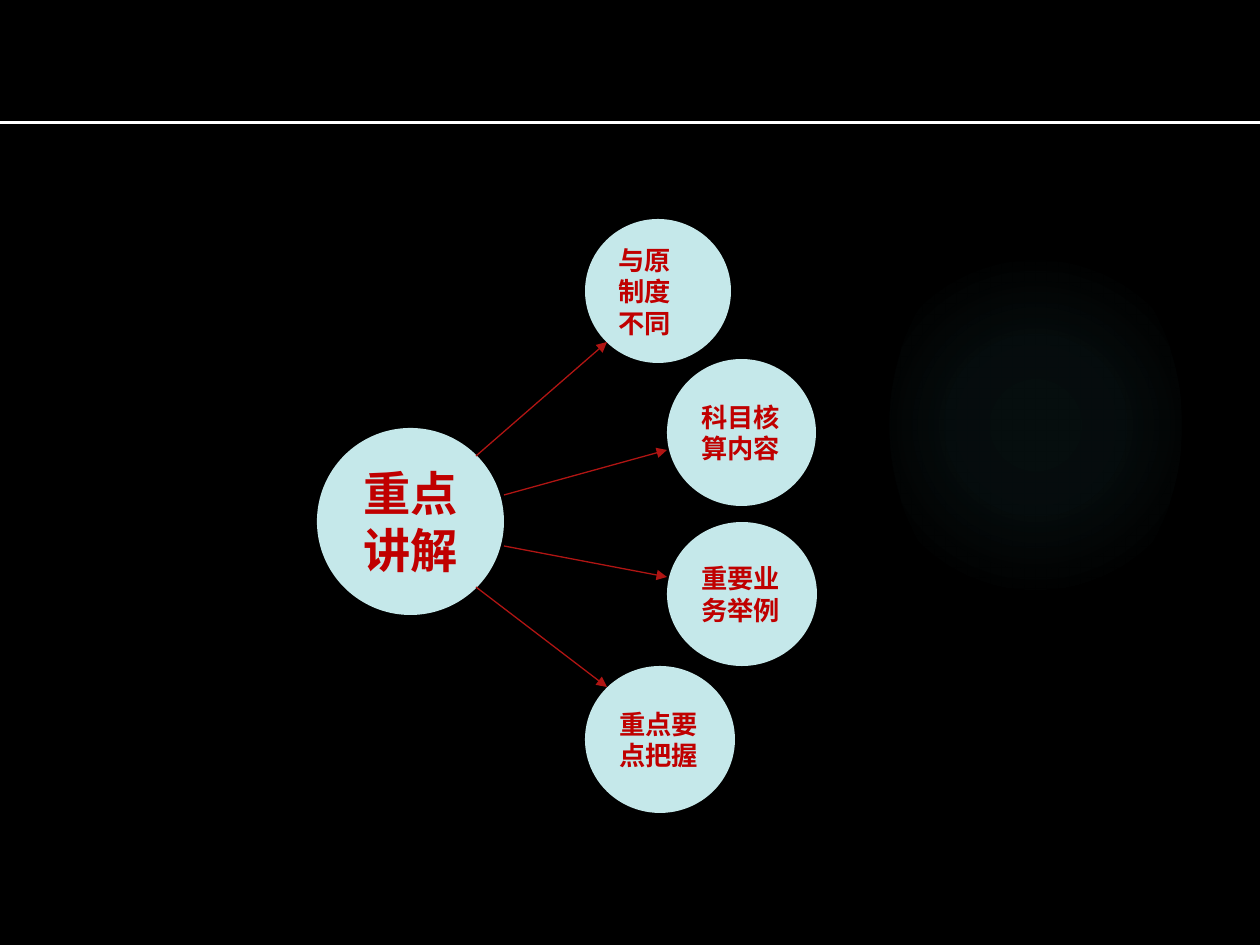
from lxml import etree
from pptx import Presentation
from pptx.dml.color import RGBColor
from pptx.enum.shapes import MSO_CONNECTOR, MSO_SHAPE
from pptx.enum.text import MSO_ANCHOR, PP_ALIGN
from pptx.oxml import parse_xml
from pptx.oxml.ns import nsdecls, qn
from pptx.util import Inches, Pt

OVAL, MINUS = MSO_SHAPE.OVAL, MSO_SHAPE.MATH_MINUS
STRAIGHT = MSO_CONNECTOR.STRAIGHT
MIDDLE = MSO_ANCHOR.MIDDLE
LEFT, CENTER = PP_ALIGN.LEFT, PP_ALIGN.CENTER

BLACK = RGBColor(0x00, 0x00, 0x00)
WHITE = RGBColor(0xFF, 0xFF, 0xFF)
PALE_TEAL = RGBColor(0xC5, 0xE8, 0xEA)
GLOW_TEAL = RGBColor(0x50, 0xB9, 0xC1)
TEXT_RED = RGBColor(0xC0, 0x00, 0x00)
ARROW_RED = RGBColor(0xB0, 0x15, 0x13)

LATIN_FONT = "League Spartan"
CHINESE_FONT = "Noto Sans CJK SC"
GLOW_STOPS = [(0, 7), (36, 6), (69, 0)]  # position and opacity in percent

# Topic, circle box, arrow start, arrow end
TOPICS = [
    ("与原制度不同", (585, 219, 146, 144), (476, 456), (607, 342)),
    ("科目核算内容", (667, 359, 149, 147), (504, 495), (667, 450)),
    ("重要业务举例", (667, 522, 150, 144), (504, 546), (667, 577)),
    ("重点要点把握", (585, 666, 150, 147), (476, 587), (607, 687)),
]


def px(length):
    return round(length * Inches(1) / 126)


def add_plain_shape(slide, kind, box, color):
    shape = slide.shapes.add_shape(kind, *map(px, box))
    shape.shadow.inherit = False
    shape.fill.solid()
    shape.fill.fore_color.rgb = color
    shape.line.fill.background()
    return shape


def add_glow(slide, box):
    """Add an ellipse whose faint colour fades out from its centre."""
    glow = add_plain_shape(slide, OVAL, box, GLOW_TEAL)
    stops = "".join(
        f'<a:gs pos="{position * 1000}"><a:srgbClr val="{GLOW_TEAL}">'
        f'<a:alpha val="{opacity * 1000}"/></a:srgbClr></a:gs>'
        for position, opacity in GLOW_STOPS
    )
    gradient = parse_xml(
        f'<a:gradFill {nsdecls("a")}><a:gsLst>{stops}</a:gsLst>'
        '<a:path path="circle"><a:fillToRect l="50000" t="50000" '
        'r="50000" b="50000"/></a:path></a:gradFill>'
    )
    properties = glow.element.spPr
    properties.replace(properties.find(qn("a:solidFill")), gradient)


def add_circle(slide, text, box, size, line_height, font_name, alignment):
    circle = add_plain_shape(slide, OVAL, box, PALE_TEAL)
    frame = circle.text_frame
    frame.word_wrap = True
    frame.vertical_anchor = MIDDLE
    paragraph = frame.paragraphs[0]
    paragraph.text = text
    paragraph.alignment = alignment
    paragraph.line_spacing = Pt(line_height)
    font = paragraph.font
    font.name = font_name
    font.size = Pt(size)
    font.bold = True
    font.color.rgb = TEXT_RED
    latin = next(paragraph._p.iter(qn("a:latin")))
    latin.addnext(latin.makeelement(qn("a:ea"), {"typeface": CHINESE_FONT}))


def add_arrow(slide, start, end):
    arrow = slide.shapes.add_connector(STRAIGHT, *map(px, start + end))
    arrow.line.color.rgb = ARROW_RED
    arrow.line.width = Pt(0.75)
    properties = arrow._element.spPr
    etree.SubElement(properties.find(qn("a:ln")), qn("a:tailEnd"), type="triangle")
    etree.SubElement(properties, qn("a:effectLst"))


def main():
    presentation = Presentation()
    presentation.slide_width = px(1260)
    presentation.slide_height = px(945)
    slide = presentation.slides.add_slide(presentation.slide_layouts[6])
    slide.background.fill.solid()
    slide.background.fill.fore_color.rgb = BLACK

    add_glow(slide, (890, 231, 291, 388))
    add_plain_shape(slide, MINUS, (-233, 117, 1736, 11), WHITE)
    add_circle(slide, "重点讲解", (317, 428, 187, 187), 27, 32.5, CHINESE_FONT, CENTER)
    for topic, box, _, _ in TOPICS:
        add_circle(slide, topic, box, 15, 18, LATIN_FONT, LEFT)
    for _, _, start, end in TOPICS:
        add_arrow(slide, start, end)

    presentation.save("out.pptx")


if __name__ == "__main__":
    main()
